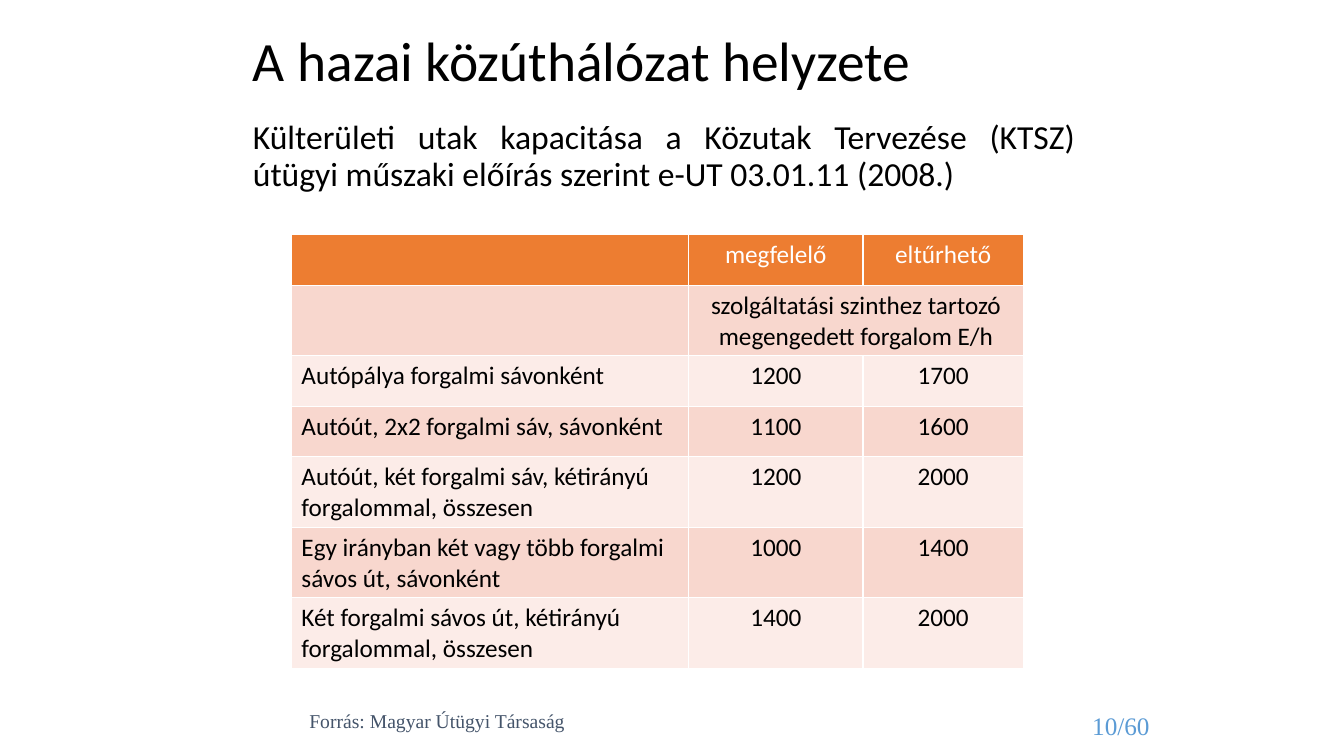
from dataclasses import dataclass

from lxml import etree
from pptx import Presentation
from pptx.dml.color import RGBColor
from pptx.enum.text import MSO_ANCHOR as Anchor, PP_ALIGN as Align
from pptx.oxml.ns import qn
from pptx.util import Inches, Pt


@dataclass(frozen=True)
class Theme:
    sans: str = "Calibri"
    serif: str = "Times New Roman"
    black: str = "000000"
    white: str = "FFFFFF"
    header: str = "ED7D31"
    band_dark: str = "F8D7CE"
    band_light: str = "FCECE8"
    source: str = "44546A"
    page: str = "5B9BD5"
    title_size: float = 39.6
    body_size: float = 24
    table_size: float = 18
    source_size: float = 14


theme = Theme()


def format_text(frame, font, size, color, align):
    for paragraph in frame.paragraphs:
        paragraph.alignment = align
        for run in paragraph.runs:
            run.font.name = font
            run.font.size = Pt(size)
            run.font.color.rgb = RGBColor.from_string(color)


def add_border(cell, color, width):
    properties = cell._tc.get_or_add_tcPr()
    for position, side in enumerate(("lnL", "lnR", "lnT", "lnB")):
        line = etree.Element(qn(f"a:{side}"), w=str(Pt(width)))
        fill = etree.SubElement(line, qn("a:solidFill"))
        etree.SubElement(fill, qn("a:srgbClr"), val=color)
        properties.insert(position, line)


presentation = Presentation()
presentation.slide_width = Inches(13.33)
presentation.slide_height = Inches(7.5)
slide = presentation.slides.add_slide(presentation.slide_layouts[6])

# Title, introduction, page number and source
texts = [
    ("A hazai közúthálózat helyzete", (2.41, 0.28, 8.74, 0.7), Anchor.MIDDLE,
     0.9, theme.sans, theme.title_size, theme.black, Align.LEFT),
    ("Külterületi utak kapacitása a Közutak Tervezése (KTSZ) "
     "útügyi műszaki előírás szerint e-UT 03.01.11 (2008.)",
     (2.41, 1.15, 8.35, 0.94), Anchor.TOP,
     0.9, theme.sans, theme.body_size, theme.black, Align.JUSTIFY),
    ("10/60", (9.42, 6.9, 2.08, 0.5), Anchor.BOTTOM,
     1.0, theme.serif, theme.table_size, theme.page, Align.RIGHT),
    ("Forrás: Magyar Útügyi Társaság", (2.97, 6.98, 7.17, 0.34), Anchor.TOP,
     1.0, theme.serif, theme.source_size, theme.source, Align.LEFT),
]
for text, place, anchor, spacing, font, size, color, align in texts:
    frame = slide.shapes.add_textbox(*map(Inches, place)).text_frame
    frame.word_wrap = True
    frame.vertical_anchor = anchor
    frame.text = text
    frame.paragraphs[0].line_spacing = spacing
    format_text(frame, font, size, color, align)

# Road capacity table
capacity_rows = [
    ("", "megfelelő", "eltűrhető"),
    ("", "szolgáltatási szinthez tartozó megengedett forgalom E/h", ""),
    ("Autópálya forgalmi sávonként", "1200", "1700"),
    ("Autóút, 2x2 forgalmi sáv, sávonként", "1100", "1600"),
    ("Autóút, két forgalmi sáv, kétirányú forgalommal, összesen", "1200", "2000"),
    ("Egy irányban két vagy több forgalmi sávos út, sávonként", "1000", "1400"),
    ("Két forgalmi sávos út, kétirányú forgalommal, összesen", "1400", "2000"),
]
column_widths = (3.94, 1.73, 1.59)
row_heights = (0.5, 0.7, 0.5, 0.5, 0.7, 0.7, 0.7)
capacity = slide.shapes.add_table(
    len(capacity_rows), len(column_widths), Inches(2.89), Inches(2.33),
    Inches(sum(column_widths)), Inches(sum(row_heights))).table
for column, width in zip(capacity.columns, column_widths):
    column.width = Inches(width)
for row, height in zip(capacity.rows, row_heights):
    row.height = Inches(height)
capacity.cell(1, 1).merge(capacity.cell(1, 2))

for r, values in enumerate(capacity_rows):
    band = theme.band_dark if r % 2 else theme.band_light
    for c, value in enumerate(values):
        cell = capacity.cell(r, c)
        cell.text_frame.text = value
        format_text(cell.text_frame, theme.sans, theme.table_size,
                    theme.black if r else theme.white,
                    Align.CENTER if c else Align.LEFT)
        for run in cell.text_frame.paragraphs[0].runs:
            run.font.bold = False
        cell.fill.solid()
        cell.fill.fore_color.rgb = RGBColor.from_string(band if r else theme.header)
        add_border(cell, theme.white, 1)

presentation.save("out.pptx")
